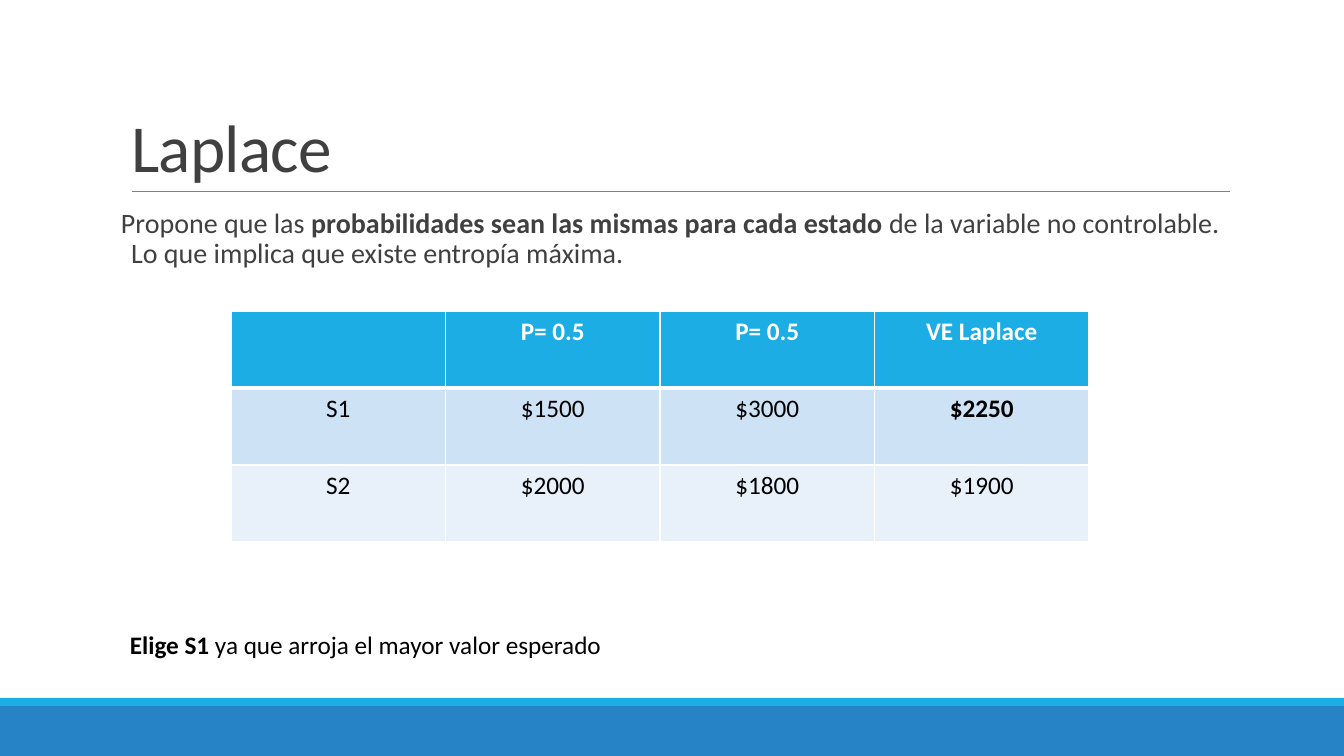
import pptx
import pptx.util
import pptx.dml.color
import pptx.enum.shapes
import pptx.enum.text
import pptx.oxml
import pptx.oxml.ns
import lxml.etree

PX = 914400 / 100.8
FONT = "Calibri"
WHITE, BLACK, GRAY = "FFFFFF", "000000", "404040"
SKY, BLUE = "1CADE4", "2683C6"
ROWS = [
    ["", "P= 0.5", "P= 0.5", "VE Laplace"],
    ["S1", "$1500", "$3000", "$2250"],
    ["S2", "$2000", "$1800", "$1900"],
]
ROW_FILLS = [SKY, "CDE3F5", "E8F1FA"]
BEST_VALUE = "$2250"


def px(*lengths):
    return [pptx.util.Emu(round(n * PX)) for n in lengths]


def rgb(color):
    return pptx.dml.color.RGBColor.from_string(color)


def fill(target, color):
    target.fill.solid()
    target.fill.fore_color.rgb = rgb(color)


def add_run(p, text, size, color, bold=False):
    r = p.add_run()
    r.text = text
    f = r.font
    f.name, f.size, f.bold = FONT, pptx.util.Pt(size), bold
    f.color.rgb = rgb(color)
    return r


def add_band(s, top, height, color):
    sp = s.shapes.add_shape(pptx.enum.shapes.MSO_SHAPE.RECTANGLE, *px(0, top, 1344, height))
    sp.shadow.inherit = False
    fill(sp, color)
    sp.line.fill.background()


def add_rule(s, x1, x2, y):
    line = s.shapes.add_connector(pptx.enum.shapes.MSO_CONNECTOR.STRAIGHT, *px(x1, y, x2, y))
    line.line.color.rgb = rgb("808080")
    line.line.width = pptx.util.Pt(0.5)
    spPr = line._element.spPr
    lxml.etree.SubElement(spPr, pptx.oxml.ns.qn("a:effectLst"))


def set_title(s, text):
    sp = s.shapes.title
    sp.left, sp.top, sp.width, sp.height = px(121, 31, 1109, 160)
    tf = sp.text_frame
    tf.auto_size = pptx.enum.text.MSO_AUTO_SIZE.NONE
    tf.vertical_anchor = pptx.enum.text.MSO_ANCHOR.BOTTOM
    p = tf.paragraphs[0]
    p.alignment = pptx.enum.text.PP_ALIGN.LEFT
    p.line_spacing = 0.85
    r = add_run(p, text, 48, GRAY)
    r._r.get_or_add_rPr().set("spc", "-50")


def add_text(s, box, runs, size, color):
    tf = s.shapes.add_textbox(*px(*box)).text_frame
    tf.word_wrap = True
    p = tf.paragraphs[0]
    for text, bold in runs:
        add_run(p, text, size, color, bold)
    return tf


def add_statement(s, runs):
    tf = add_text(s, (121, 204, 1109, 444), runs, 20, GRAY)
    tf.margin_left = tf.margin_right = 0
    p = tf.paragraphs[0]
    p.line_spacing = 0.9
    p.space_before, p.space_after = pptx.util.Pt(12), pptx.util.Pt(2)
    pPr = p._p.get_or_add_pPr()
    pPr.set("marL", "91440")
    pPr.set("indent", "-91440")


def set_border(cell, side, points):
    xml = (f'<a:{side} {pptx.oxml.ns.nsdecls("a")} w="{pptx.util.Pt(points)}">'
           f'<a:solidFill><a:srgbClr val="{WHITE}"/></a:solidFill></a:{side}>')
    cell._tc.get_or_add_tcPr().append(pptx.oxml.parse_xml(xml))


def add_values_table(s):
    table = s.shapes.add_table(len(ROWS), len(ROWS[0]), *px(231, 311, 858, 231)).table
    for i, values in enumerate(ROWS):
        table.rows[i].height = px(77)[0]
        for j, text in enumerate(values):
            cell = table.cell(i, j)
            top, bottom = (3 if i == 1 else 1), (3 if i == 0 else 1)
            for side, points in zip(("lnL", "lnR", "lnT", "lnB"), (1, 1, top, bottom)):
                set_border(cell, side, points)
            fill(cell, ROW_FILLS[i])
            if text:
                p = cell.text_frame.paragraphs[0]
                p.alignment = pptx.enum.text.PP_ALIGN.CENTER
                add_run(p, text, 18, BLACK if i else WHITE, i == 0 or text == BEST_VALUE)


def main():
    prs = pptx.Presentation()
    prs.slide_width, prs.slide_height = px(1344, 756)
    s = prs.slides.add_slide(prs.slide_layouts[5])
    add_band(s, 706, 50, BLUE)
    add_band(s, 698, 8, SKY)
    add_rule(s, 132, 1230, 191)
    set_title(s, "Laplace")
    add_statement(s, [
        ("Propone que las ", False),
        ("probabilidades sean las mismas para cada estado", True),
        (" de la variable no controlable. Lo que implica que existe entropía máxima.", False),
    ])
    add_values_table(s)
    add_text(s, (120, 624, 1018, 40), [
        ("Elige S1", True),
        (" ya que arroja el mayor valor esperado", False),
    ], 18, BLACK)
    prs.save("out.pptx")


if __name__ == "__main__":
    main()
